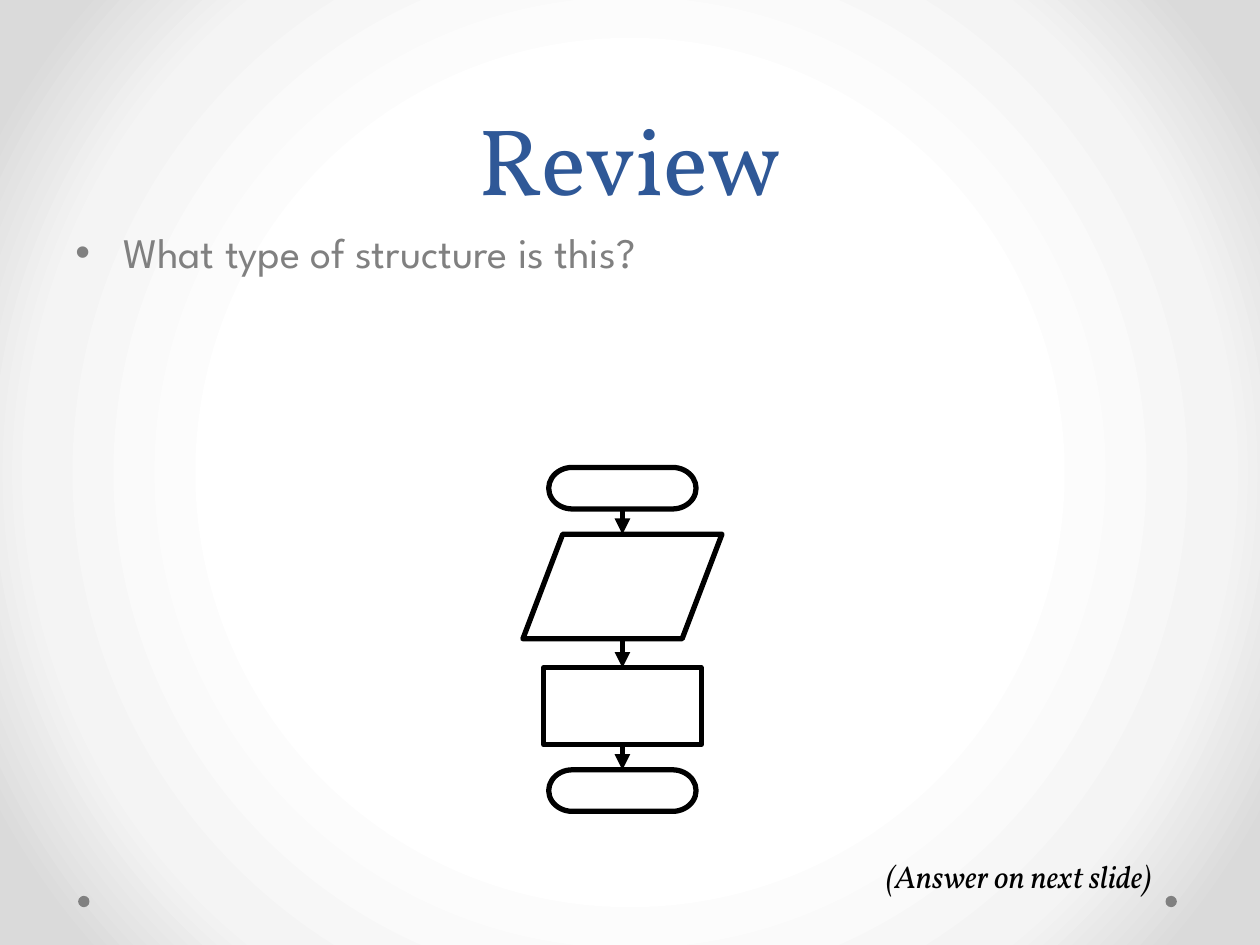
import pptx
import pptx.util
import pptx.dml.color
import pptx.enum.shapes
import pptx.enum.text
import pptx.oxml
import pptx.oxml.ns
from pptx.util import Inches

COLORS = {"title": "2F5897", "gray": "808080", "black": "000000",
          "center": "FFFFFF", "middle": "F4F4F4", "edge": "DADADA"}
SHAPES = pptx.enum.shapes.MSO_SHAPE
ALIGN = pptx.enum.text.PP_ALIGN
ANCHOR = pptx.enum.text.MSO_ANCHOR
NAMESPACE = pptx.oxml.ns.nsdecls("a")

presentation = pptx.Presentation()
presentation.slide_width = Inches(10)
presentation.slide_height = Inches(7.5)
slide = presentation.slides.add_slide(presentation.slide_layouts[6])


def rgb(name):
    return pptx.dml.color.RGBColor.from_string(COLORS[name])


def add_text(text, left, top, width, height, font, size, color, italic=False,
             align=ALIGN.LEFT, anchor=ANCHOR.TOP, before=0, line_spacing=None, bullet=None):
    box = slide.shapes.add_textbox(Inches(left), Inches(top), Inches(width), Inches(height))
    frame = box.text_frame
    frame.word_wrap = True
    frame.vertical_anchor = anchor
    paragraph = frame.paragraphs[0]
    paragraph.alignment = align
    paragraph.space_before = pptx.util.Pt(before)
    if line_spacing:
        paragraph.line_spacing = pptx.util.Pt(line_spacing)
    if bullet:
        properties = paragraph._p.get_or_add_pPr()
        properties.set("marL", str(Inches(0.38)))
        properties.set("indent", str(-Inches(0.38)))
        properties.append(pptx.oxml.parse_xml(f'<a:buFont {NAMESPACE} typeface="Arial"/>'))
        properties.append(pptx.oxml.parse_xml(f'<a:buChar {NAMESPACE} char="{bullet}"/>'))
    run = paragraph.add_run()
    run.text = text
    run.font.name = font
    run.font.size = pptx.util.Pt(size)
    run.font.italic = italic
    run.font.color.rgb = rgb(color)


background = slide.background.fill
background.gradient()
gradient = background._xPr.find(pptx.oxml.ns.qn("a:gradFill"))
for child in list(gradient):
    gradient.remove(child)
stops = "".join(f'<a:gs pos="{position * 1000}"><a:srgbClr val="{COLORS[name]}"/></a:gs>'
                for position, name in [(50, "center"), (76, "middle"), (92, "edge")])
gradient.append(pptx.oxml.parse_xml(f"<a:gsLst {NAMESPACE}>{stops}</a:gsLst>"))
gradient.append(pptx.oxml.parse_xml(
    f'<a:path {NAMESPACE} path="circle">'
    '<a:fillToRect l="50000" t="50000" r="50000" b="50000"/></a:path>'))

for left in (9.25, 0.62):
    dot = slide.shapes.add_shape(SHAPES.OVAL, Inches(left), Inches(7.11), Inches(0.09), Inches(0.09))
    dot.shadow.inherit = False
    dot.fill.solid()
    dot.fill.fore_color.rgb = rgb("gray")
    dot.line.fill.background()

add_text("What type of structure is this?", 0.5, 1.75, 9, 4.95, "League Spartan", 24, "gray",
         before=4.8, bullet="•")
add_text("(Answer on next slide)", 6.93, 6.75, 2.6, 0.4, "Vollkorn", 18, "black",
         italic=True, before=9)

center = 4.94
flowchart = []
for kind, top, width, height in [
    (SHAPES.FLOWCHART_TERMINATOR, 3.71, 1.17, 0.33),
    (SHAPES.FLOWCHART_DATA, 4.24, 1.58, 0.83),
    (SHAPES.RECTANGLE, 5.3, 1.25, 0.61),
    (SHAPES.FLOWCHART_TERMINATOR, 6.11, 1.17, 0.33),
]:
    shape = slide.shapes.add_shape(kind, Inches(center - width / 2), Inches(top),
                                   Inches(width), Inches(height))
    shape.shadow.inherit = False
    shape.fill.background()
    shape.line.color.rgb = rgb("black")
    shape.line.width = pptx.util.Pt(3)
    flowchart.append(shape)

for upper, lower in zip(flowchart, flowchart[1:]):
    arrow = slide.shapes.add_connector(pptx.enum.shapes.MSO_CONNECTOR.STRAIGHT,
                                       Inches(center), upper.top + upper.height,
                                       Inches(center), lower.top)
    if upper.auto_shape_type != SHAPES.FLOWCHART_DATA:
        arrow.begin_connect(upper, 2)
    if lower.auto_shape_type != SHAPES.FLOWCHART_DATA:
        arrow.end_connect(lower, 0)
    arrow.line.color.rgb = rgb("black")
    arrow.line.width = pptx.util.Pt(3)
    arrow.line._get_or_add_ln().append(
        pptx.oxml.parse_xml(f'<a:tailEnd {NAMESPACE} type="triangle"/>'))
    arrow._element.spPr.append(pptx.oxml.parse_xml(f"<a:effectLst {NAMESPACE}/>"))

add_text("Review", 0.5, 0, 9, 1.75, "Vollkorn", 54, "title",
         align=ALIGN.CENTER, anchor=ANCHOR.BOTTOM, line_spacing=58)

presentation.save("out.pptx")
